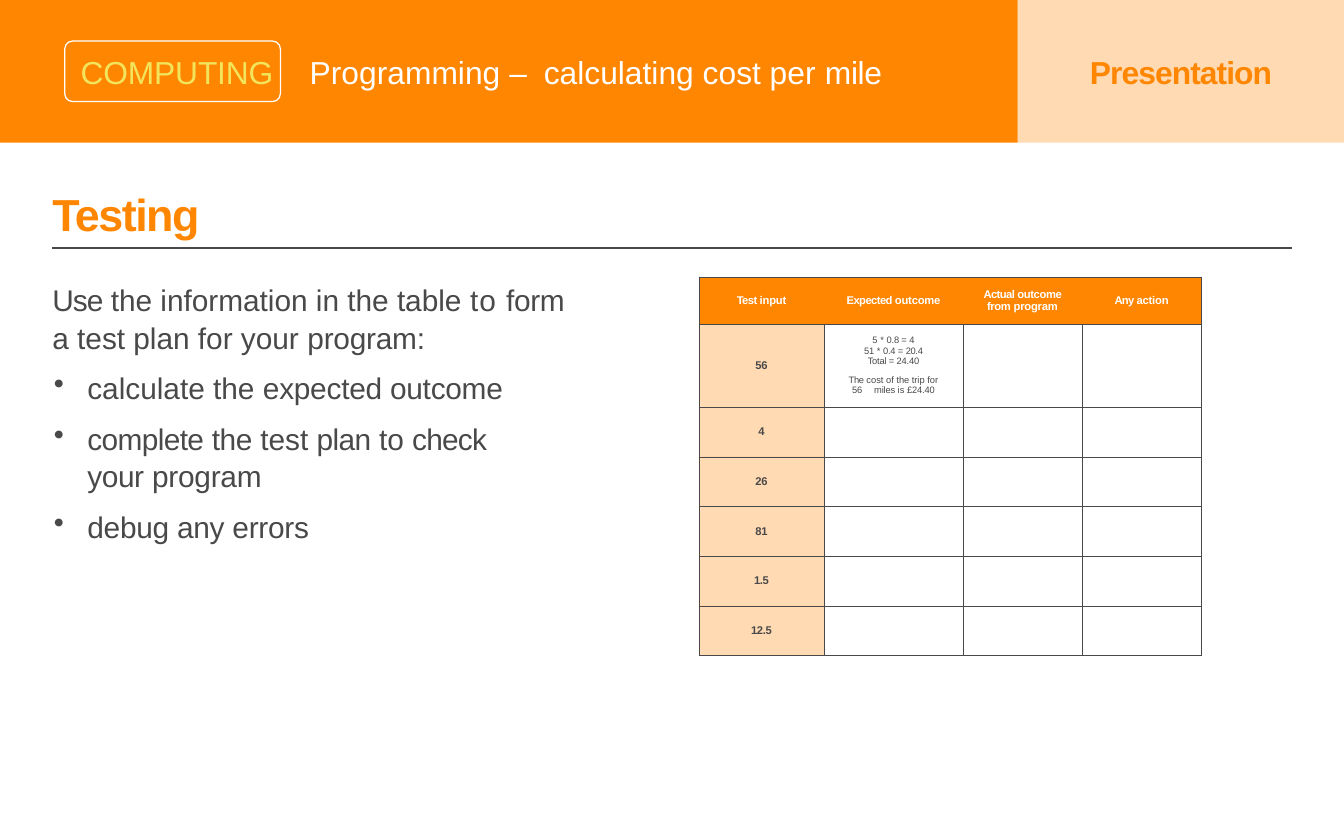
"""Build the Testing slide: banner, task list and test plan table."""
import pptx
import pptx.util
import pptx.dml.color
import pptx.enum.shapes
import pptx.enum.text
import pptx.oxml
import pptx.oxml.ns

Pt = pptx.util.Pt
KIND = pptx.enum.shapes.MSO_SHAPE
ALIGN = pptx.enum.text.PP_ALIGN
MIDDLE = pptx.enum.text.MSO_ANCHOR.MIDDLE
HUES = {"orange": "FF8600", "white": "FFFFFF", "yellow": "F2E55B", "grey": "4A494A"}
FONT = "Arial"
PAGE = (720, 449.28)
SPLIT, BANNER = 545.2, 76.4

LABELS = [
    ((35.3, 26.64, 114.5, 22.3), 7.9, 17, "yellow", False, [("COMPUTING", -0.1)]),
    ((583.2, 26.64, 100.8, 22.3), 0.7, 17, "orange", True, [("Presentation", -0.5)]),
    ((165.2, 26.64, 314, 22.3), 0.7, 17, "white", False,
     [("Programming ", 0), ("– ", 2.1), ("calculating cost per ", 0), ("mile", -0.2)]),
    ((27.4, 98.64, 81.4, 31), 0.7, 24, "orange", True, [("Testing", -0.8)]),
]
INTRO = [("Use ", -0.5), ("the information in the table ", 0), ("to ", 0.5), ("form ", -0.2),
         ("a test plan for your ", 0), ("program:", -0.1)]
TASKS = [
    [("calculate the ", 0), ("expected outcome", -0.1)],
    [("complete ", -0.3), ("the ", -0.2), ("test ", 0), ("plan ", -0.3), ("to ", 0),
     ("check ", -0.4), ("your ", -0.2), ("program", -0.1)],
    [("debug any errors", -0.1)],
]
HEADS = [
    [("Test ", -0.3), ("input", -0.1)],
    [("Expected ", -0.3), ("outcome", -0.1)],
    [("Actual ", -0.3), ("outcome from ", -0.2), ("program", -0.1)],
    [("Any ", -0.4), ("action", -0.1)],
]
INPUTS = ["56", "4", "26", "81", "1.5", "12.5"]
ANSWER = [
    [("5 * ", 0), ("0.8 = ", -0.1), ("4", -0.5)],
    [("51 ", -0.1), ("* ", 0), ("0.4 = ", -0.1), ("20.4", -0.2)],
    [("Total = 24.40", -0.1)],
    [("The ", -0.2), ("cost of ", 0), ("the ", -0.1), ("trip for ", 0), ("56", -0.2),
     (" ", 5), ("miles ", -0.1), ("is ", 0), ("£24.40", -0.1)],
]
COLS = [67.1, 74.4, 63.8, 63.8]
ROWS = [25.2, 44.6] + [26.6] * 5


def color(name):
    return pptx.dml.color.RGBColor.from_string(HUES[name])


def paint(fill, name, node, alpha=None):
    fill.solid()
    fill.fore_color.rgb = color(name)
    if alpha:
        tone = node.find(".//" + pptx.oxml.ns.qn("a:srgbClr"))
        if node.tag.endswith("tcPr"):
            tone = node.find(pptx.oxml.ns.qn("a:solidFill"))[0]
        tone.append(pptx.oxml.parse_xml(
            f'<a:alpha {pptx.oxml.ns.nsdecls("a")} val="{alpha * 1000}"/>'))


def write(para, runs, size, hue, bold=False):
    for text, gap in runs:
        run = para.add_run()
        run.text = text
        run.font.name, run.font.size, run.font.bold = FONT, Pt(size), bold
        run.font.color.rgb = color(hue)
        if gap:
            run.font._element.set("spc", str(round(gap * 100)))


def block(slide, kind, area, hue=None, alpha=None):
    shape = slide.shapes.add_shape(kind, *map(Pt, area))
    shape.shadow.inherit = False
    if hue:
        paint(shape.fill, hue, shape._element.spPr, alpha)
        shape.line.fill.background()
    else:
        shape.fill.background()
    return shape


def textbox(slide, area, left):
    frame = slide.shapes.add_textbox(*map(Pt, area)).text_frame
    frame.word_wrap = True
    frame.margin_left, frame.margin_top = Pt(left), Pt(1.6)
    frame.margin_right = frame.margin_bottom = 0
    return frame


def bullet(para):
    props = para._p.get_or_add_pPr()
    for key, size in (("marL", 18.7), ("marR", 30), ("indent", -18)):
        props.set(key, str(int(Pt(size))))
    props.append(pptx.oxml.parse_xml(
        f'<a:buChar {pptx.oxml.ns.nsdecls("a")} char="•"/>'))


def border(cell, sides):
    props = cell._tc.get_or_add_tcPr()
    for side in "LRTB":
        ink = f'<a:solidFill><a:srgbClr val="{HUES["grey"]}"/></a:solidFill>'
        props.append(pptx.oxml.parse_xml(
            f'<a:ln{side} {pptx.oxml.ns.nsdecls("a")} w="{int(Pt(0.25))}">'
            f'{ink if side in sides else "<a:noFill/>"}</a:ln{side}>'))


def fill_cell(cell, paras, size, hue, bold, pad):
    cell.margin_left = cell.margin_right = Pt(pad)
    cell.margin_top = cell.margin_bottom = 0
    cell.vertical_anchor = MIDDLE
    frame = cell.text_frame
    for at, runs in enumerate(paras):
        para = frame.add_paragraph() if at else frame.paragraphs[0]
        para.alignment = ALIGN.CENTER
        if at == 3:
            para.space_before = Pt(4.2)
        write(para, runs, size, hue, bold)


def add_plan(slide):
    area = (374.4, 148.3, sum(COLS), sum(ROWS))
    table = slide.shapes.add_table(len(ROWS), len(COLS), *map(Pt, area)).table
    table.first_row = table.horz_banding = False
    for col, width in zip(table.columns, COLS):
        col.width = Pt(width)
    for row, height in zip(table.rows, ROWS):
        row.height = Pt(height)
    last = len(COLS) - 1
    for r in range(len(ROWS)):
        for c in range(len(COLS)):
            cell = table.cell(r, c)
            props = cell._tc.get_or_add_tcPr()
            if r == 0:
                border(cell, "TB" + "L" * (c == 0) + "R" * (c == last))
                paint(cell.fill, "orange", props)
                fill_cell(cell, [HEADS[c]], 6, "white", True, 6)
            elif c == 0:
                border(cell, "LRTB")
                paint(cell.fill, "orange", props, 30)
                fill_cell(cell, [[(INPUTS[r - 1], -0.2)]], 6, "grey", True, 0)
            else:
                border(cell, "LRTB")
                cell.fill.background()
                paras = ANSWER if (r, c) == (1, 1) else []
                fill_cell(cell, paras, 5, "grey", False, 11)


def main():
    deck = pptx.Presentation()
    deck.slide_width, deck.slide_height = map(Pt, PAGE)
    slide = deck.slides.add_slide(deck.slide_layouts[6])
    block(slide, KIND.RECTANGLE, (SPLIT, 0, PAGE[0] - SPLIT, BANNER), "orange", 30)
    block(slide, KIND.RECTANGLE, (0, 0, SPLIT, BANNER), "orange")
    badge = block(slide, KIND.ROUNDED_RECTANGLE, (34.7, 22, 115.5, 32.4))
    badge.adjustments[0] = 0.13
    badge.line.color.rgb, badge.line.width = color("white"), Pt(0.68)
    for area, left, size, hue, bold, runs in LABELS:
        write(textbox(slide, area, left).paragraphs[0], runs, size, hue, bold)

    rule = slide.shapes.add_connector(
        pptx.enum.shapes.MSO_CONNECTOR.STRAIGHT, *map(Pt, (28, 132.8, 692, 132.8)))
    rule.line.color.rgb, rule.line.width = color("grey"), Pt(1)
    rule._element.spPr.append(pptx.oxml.parse_xml(
        f'<a:effectLst {pptx.oxml.ns.nsdecls("a")}/>'))

    body = textbox(slide, (27.4, 148.3, 278.6, 138.2), 0.7)
    for at, runs in enumerate([INTRO] + TASKS):
        para = body.add_paragraph() if at else body.paragraphs[0]
        para.line_spacing = 1.05
        if at:
            para.space_before = Pt(7)
            bullet(para)
        write(para, runs, 16, "grey")
    add_plan(slide)
    deck.save("out.pptx")


if __name__ == "__main__":
    main()
